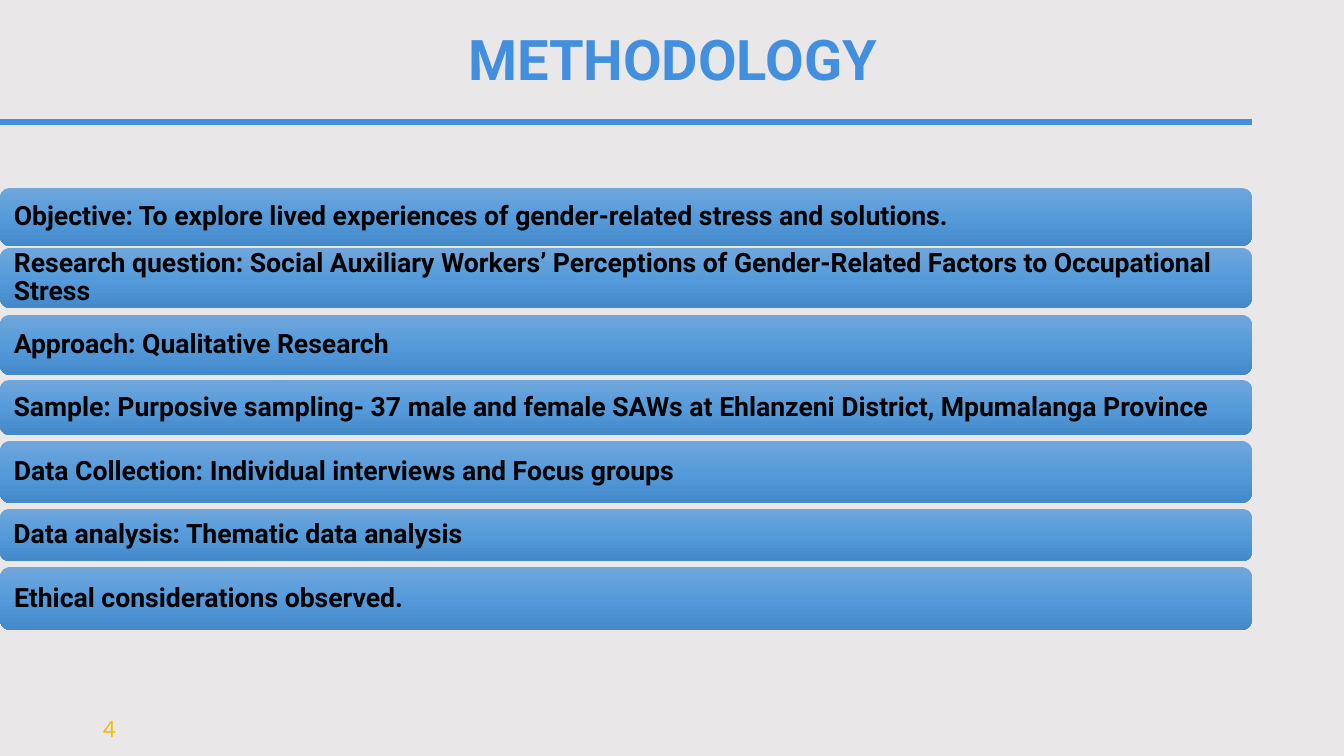
from copy import deepcopy
from dataclasses import dataclass

from pptx import Presentation
from pptx.dml.color import RGBColor
from pptx.enum.shapes import MSO_SHAPE
from pptx.enum.text import MSO_ANCHOR, PP_ALIGN
from pptx.oxml.ns import qn
from pptx.util import Emu, Pt

RECTANGLE = MSO_SHAPE.RECTANGLE
ROUNDED = MSO_SHAPE.ROUNDED_RECTANGLE
MIDDLE = MSO_ANCHOR.MIDDLE
LEFT, CENTER = PP_ALIGN.LEFT, PP_ALIGN.CENTER

EMU_PER_PIXEL = 914400 / 100.8
CONTENT_WIDTH = 1252
BAR_INSET = 11


@dataclass(frozen=True)
class Theme:
    background: str = "E9E7E7"
    accent: str = "418FDE"
    number: str = "F9BE00"
    bar_text: str = "000000"
    bar_gradient: tuple = ("71A6DB", "559BDB", "448ACA")
    heading_font: str = "Roboto"
    number_font: str = "Calibri"
    title_size: int = 40
    bar_size: int = 19
    number_size: int = 18


THEME = Theme()

METHODOLOGY_STEPS = (
    (188, 58, "Objective: To explore lived experiences of gender-related stress and solutions."),
    (248, 60, "Research question: Social Auxiliary Workers’ Perceptions of "
              "Gender-Related Factors to Occupational Stress"),
    (315, 60, "Approach: Qualitative Research"),
    (380, 55, "Sample: Purposive sampling- 37 male and female SAWs at "
              "Ehlanzeni District, Mpumalanga Province"),
    (441, 62, "Data Collection: Individual interviews and Focus groups"),
    (509, 52, "Data analysis: Thematic data analysis"),
    (567, 63, "Ethical considerations observed."),
)


def px(value):
    return Emu(round(value * EMU_PER_PIXEL))


def box(*lengths):
    return [px(length) for length in lengths]


def color(value):
    return RGBColor.from_string(value)


def write_text(shape, text, font_name, size, text_color, bold, alignment, spacing):
    text_frame = shape.text_frame
    text_frame.text = text
    text_frame.word_wrap = True
    text_frame.vertical_anchor = MIDDLE
    paragraph = text_frame.paragraphs[0]
    paragraph.alignment = alignment
    paragraph.line_spacing = spacing
    font = paragraph.runs[0].font
    font.name = font_name
    font.size = Pt(size)
    font.bold = bold
    font.color.rgb = color(text_color)


def add_plain_shape(slide, kind, left, top, width, height):
    shape = slide.shapes.add_shape(kind, *box(left, top, width, height))
    shape.shadow.inherit = False
    shape.line.fill.background()
    return shape


def fill_gradient(shape, colors):
    fill = shape.fill
    fill.gradient()
    fill.gradient_angle = 270
    stop_list = shape._element.spPr.find(qn("a:gradFill")).find(qn("a:gsLst"))
    stop_list.insert(1, deepcopy(stop_list[0]))
    for index, stop in enumerate(fill.gradient_stops):
        stop.position = index / (len(colors) - 1)
        stop.color.rgb = color(colors[index])


def add_title(slide, text):
    title = slide.shapes.add_textbox(*box(93, 21, 1159, 82))
    write_text(title, text, THEME.heading_font, THEME.title_size,
               THEME.accent, True, CENTER, 0.9)


def add_rule(slide):
    rule = add_plain_shape(slide, RECTANGLE, 0, 119, CONTENT_WIDTH, 6)
    rule.fill.solid()
    rule.fill.fore_color.rgb = color(THEME.accent)


def add_step_bar(slide, top, height, text):
    bar = add_plain_shape(slide, ROUNDED, 0, top, CONTENT_WIDTH, height)
    fill_gradient(bar, THEME.bar_gradient)
    text_frame = bar.text_frame
    text_frame.margin_left = text_frame.margin_right = px(BAR_INSET)
    text_frame.margin_top = text_frame.margin_bottom = 0
    write_text(bar, text, THEME.heading_font, THEME.bar_size,
               THEME.bar_text, True, LEFT, 0.9)


def add_page_number(slide, text):
    number = slide.shapes.add_textbox(*box(93, 707, 117, 40))
    write_text(number, text, THEME.number_font, THEME.number_size,
               THEME.number, False, LEFT, 1.0)


def main():
    presentation = Presentation()
    presentation.slide_width = px(1344)
    presentation.slide_height = px(756)
    slide = presentation.slides.add_slide(presentation.slide_layouts[6])
    slide.background.fill.solid()
    slide.background.fill.fore_color.rgb = color(THEME.background)
    add_rule(slide)
    add_title(slide, "METHODOLOGY")
    for top, height, text in METHODOLOGY_STEPS:
        add_step_bar(slide, top, height, text)
    add_page_number(slide, "4")
    presentation.save("out.pptx")


if __name__ == "__main__":
    main()
